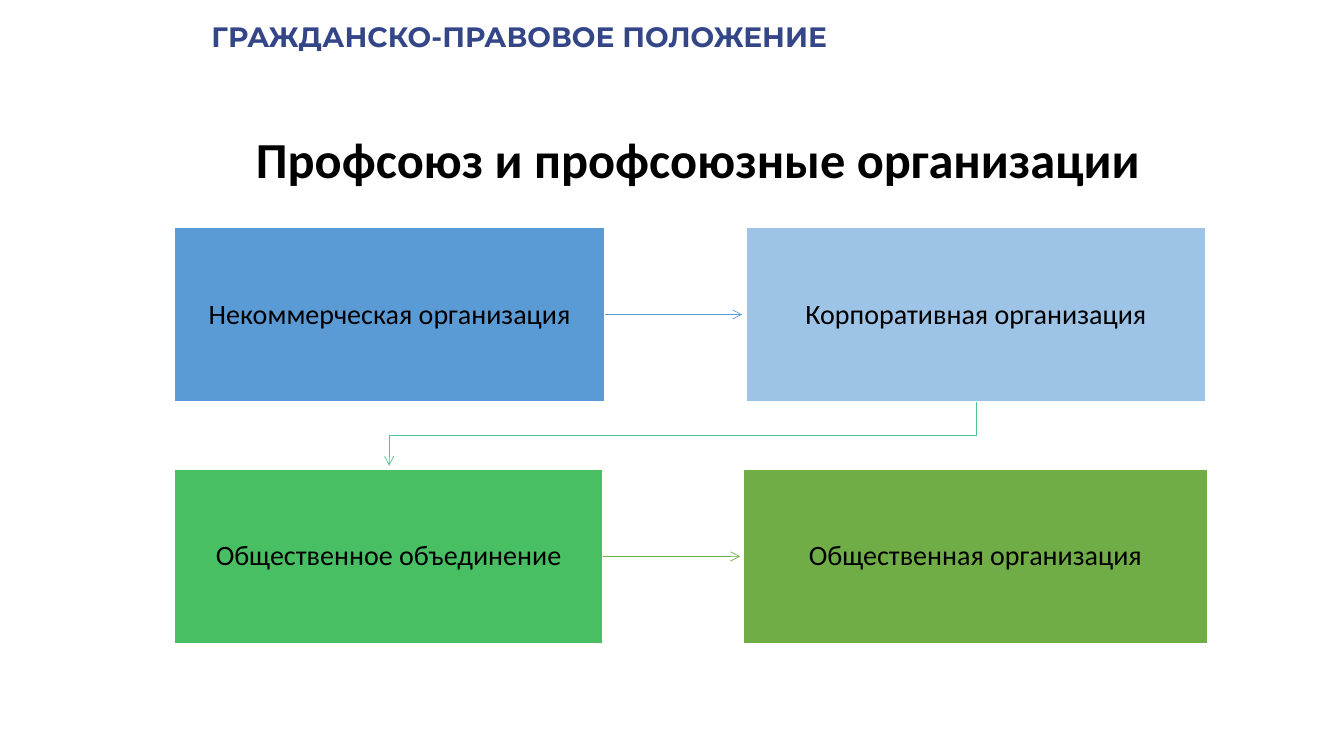
from lxml import etree
from pptx import Presentation
from pptx.dml.color import RGBColor
from pptx.enum import shapes, text
from pptx.oxml import ns
from pptx.util import Inches, Pt


def write(shape, words, size, font, color, align, bold=False):
    frame = shape.text_frame
    frame.word_wrap = True
    frame.auto_size = text.MSO_AUTO_SIZE.NONE
    para = frame.paragraphs[0]
    para.alignment = align
    span = para.add_run()
    span.text = words
    span.font.size = Pt(size)
    span.font.name = font
    span.font.bold = bold
    span.font.color.rgb = RGBColor.from_string(color)
    return frame, para


def style_arrow(arrow, color):
    """Give a thin line an open arrowhead at its end and no shadow."""
    arrow.line.color.rgb = RGBColor.from_string(color)
    arrow.line.width = Pt(0.5)
    head = etree.SubElement(arrow.line._get_or_add_ln(), ns.qn("a:tailEnd"))
    head.set("type", "arrow")
    etree.SubElement(arrow._element.spPr, ns.qn("a:effectLst"))


deck = Presentation()
deck.slide_width = Inches(13.33)
deck.slide_height = Inches(7.5)
page = deck.slides.add_slide(deck.slide_layouts[5])
center = text.PP_ALIGN.CENTER

title = page.shapes.title
title.left, title.top = Inches(0.29), Inches(0.14)
title.width, title.height = Inches(9.72), Inches(0.44)
frame, para = write(title, "ГРАЖДАНСКО-ПРАВОВОЕ ПОЛОЖЕНИЕ", 20, "Montserrat", "344688", center, True)
frame.vertical_anchor = text.MSO_ANCHOR.TOP

# Boxes of the scheme
row_tops = (2.26, 4.66)
box_height = 1.73
boxes = [
    ("Некоммерческая организация", 1.73, row_tops[0], 4.27, "5B9BD5"),
    ("Корпоративная организация", 7.4, row_tops[0], 4.56, "9DC3E6"),
    ("Общественное объединение", 1.73, row_tops[1], 4.25, "49BF64"),
    ("Общественная организация", 7.37, row_tops[1], 4.61, "70AD47"),
]
for words, left, top, width, fill in boxes:
    box = page.shapes.add_shape(shapes.MSO_SHAPE.RECTANGLE, Inches(left), Inches(top),
                                Inches(width), Inches(box_height))
    box.shadow.inherit = False
    box.fill.solid()
    box.fill.fore_color.rgb = RGBColor.from_string(fill)
    box.line.color.rgb = RGBColor.from_string("FFFFFF")
    box.line.width = Pt(1)
    frame, para = write(box, words, 20, "Calibri", "000000", center)
    frame.vertical_anchor = text.MSO_ANCHOR.MIDDLE
    frame.margin_left = frame.margin_right = Inches(0.16)
    frame.margin_top = frame.margin_bottom = Inches(0.16)
    para.line_spacing = 0.9

# Arrows along each row
for start, end, y, color in [(6, 7.36, 3.12, "5B9BD5"), (5.98, 7.34, 5.52, "70AD47")]:
    arrow = page.shapes.add_connector(shapes.MSO_CONNECTOR.STRAIGHT, Inches(start), Inches(y),
                                      Inches(end), Inches(y))
    style_arrow(arrow, color)

# Bent arrow from the first row to the second
turns = [(9.68, 3.99), (9.68, 4.32), (3.86, 4.32), (3.86, 4.62)]
points = [(Inches(x), Inches(y)) for x, y in turns]
outline = page.shapes.build_freeform(*points[0])
outline.add_line_segments(points[1:], close=False)
bend = outline.convert_to_shape()
bend.fill.background()
style_arrow(bend, "4DC58D")

heading = page.shapes.add_textbox(Inches(2.44), Inches(1.22), Inches(9.45), Inches(0.71))
write(heading, "Профсоюз и профсоюзные организации", 36, "Calibri", "000000",
      text.PP_ALIGN.JUSTIFY, True)

deck.save("out.pptx")
